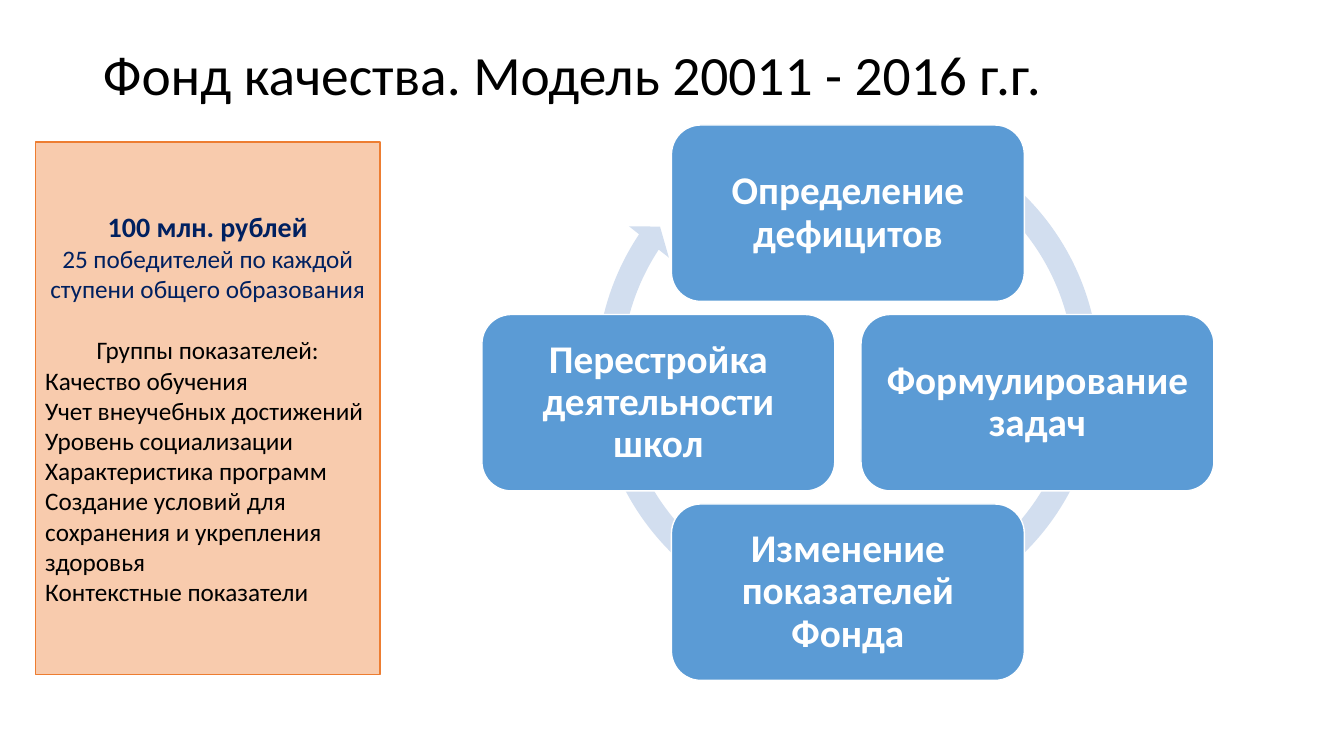
from pptx import Presentation
from pptx.dml.color import RGBColor as RGB
from pptx.enum.shapes import MSO_SHAPE as SHAPE
from pptx.enum.text import MSO_ANCHOR as ANCHOR, MSO_AUTO_SIZE as AUTO, PP_ALIGN as ALIGN
from pptx.util import Emu, Pt

PX = 9144  # 100 px to the inch
COLORS = {
    "black": "000000", "white": "FFFFFF", "navy": "002060", "blue": "5B9BD5",
    "pale": "D2DEEF", "peach": "F8CBAD", "orange": "ED7D31",
}


def px(*lengths):
    return [Emu(n * PX) for n in lengths]


def rgb(name):
    return RGB.from_string(COLORS[name])


def write(p, text, size=18, color="black", bold=False, align=ALIGN.LEFT,
          line=None, before=0):
    p.alignment = align
    p.space_before = Pt(before)
    if line:
        p.line_spacing = line
    r = p.add_run()
    r.text = text
    font = r.font
    font.name, font.size, font.bold = "Calibri", Pt(size), bold
    font.color.rgb = rgb(color)


class Deck:
    def __init__(self, width, height):
        self.prs = Presentation()
        self.prs.slide_width, self.prs.slide_height = px(width, height)
        self.s = self.prs.slides.add_slide(self.prs.slide_layouts[5])

    def title(self, text, box, **fmt):
        sp = self.s.shapes.title
        sp.left, sp.top, sp.width, sp.height = px(*box)
        tf = sp.text_frame
        tf.auto_size = AUTO.NONE
        tf.vertical_anchor = ANCHOR.MIDDLE
        write(tf.paragraphs[0], text, **fmt)

    def shape(self, kind, box, fill, line=None, adjust=()):
        sp = self.s.shapes.add_shape(kind, *px(*box))
        sp.shadow.inherit = False
        sp.fill.solid()
        sp.fill.fore_color.rgb = rgb(fill)
        if line:
            sp.line.color.rgb = rgb(line)
            sp.line.width = Pt(1)
        else:
            sp.line.fill.background()
        for i, value in enumerate(adjust):
            sp.adjustments[i] = value
        return sp

    def text(self, sp, paragraphs, inset=(10, 5)):
        tf = sp.text_frame
        tf.word_wrap = True
        tf.vertical_anchor = ANCHOR.MIDDLE
        tf.margin_left = tf.margin_right = px(inset[0])[0]
        tf.margin_top = tf.margin_bottom = px(inset[1])[0]
        for i, (text, fmt) in enumerate(paragraphs):
            p = tf.add_paragraph() if i else tf.paragraphs[0]
            write(p, text, **fmt)


def main():
    deck = Deck(1333, 750)
    deck.title("Фонд качества. Модель 20011 - 2016 г.г.", (92, 40, 1150, 73),
               size=39.6, line=0.9)

    # Cycle: arrow ring, then four steps clockwise around its centre
    deck.shape(SHAPE.CIRCULAR_ARROW, (579, 109, 524, 524), "pale",
               adjust=(0.047, 2.729, 128.136, 180.43, 0.048))
    left, top, step = 666, 312, 188
    stages = [
        ("Определение дефицитов", 0, -1),
        ("Формулирование задач", 1, 0),
        ("Изменение показателей Фонда", 0, 1),
        ("Перестройка деятельности школ", -1, 0),
    ]
    stage_format = dict(size=28, color="white", bold=True, align=ALIGN.CENTER, line=0.9)
    for text, dx, dy in stages:
        sp = deck.shape(SHAPE.ROUNDED_RECTANGLE,
                        (left + dx * step, top + dy * step, 350, 175), "blue", "white")
        deck.text(sp, [(text, stage_format)], inset=(12, 12))

    # Fund panel: prize, then indicator groups
    center = dict(align=ALIGN.CENTER)
    groups = [
        "Качество обучения",
        "Учет внеучебных достижений",
        "Уровень социализации",
        "Характеристика программ",
        "Создание условий для сохранения и укрепления здоровья",
        "Контекстные показатели",
    ]
    panel = deck.shape(SHAPE.RECTANGLE, (35, 141, 342, 528), "peach", "orange")
    deck.text(panel, [
        ("100 млн. рублей", dict(size=20, color="navy", bold=True, **center)),
        ("25 победителей по каждой ступени общего образования",
         dict(color="navy", **center)),
        ("Группы показателей:", dict(before=22, **center)),
        *((group, {}) for group in groups),
    ])

    deck.prs.save("out.pptx")


if __name__ == "__main__":
    main()
